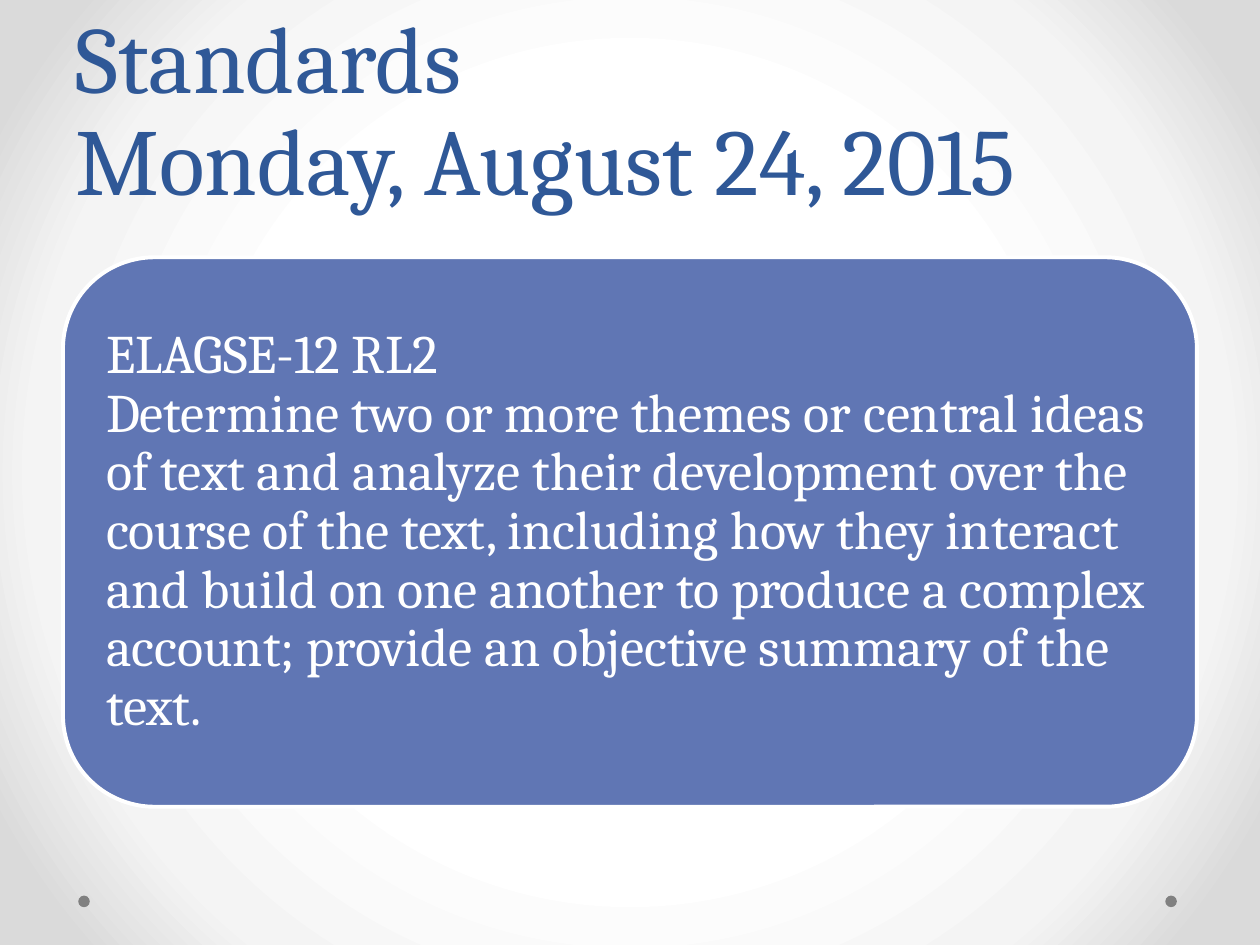
from dataclasses import dataclass

from lxml.etree import SubElement
from pptx import Presentation
from pptx.dml.color import RGBColor
from pptx.enum.shapes import MSO_SHAPE
from pptx.enum.text import MSO_ANCHOR, PP_ALIGN
from pptx.oxml.ns import qn
from pptx.util import Pt


@dataclass(frozen=True)
class Theme:
    font: str = "Cambria"
    heading: RGBColor = RGBColor(0x2F, 0x58, 0x97)
    panel: RGBColor = RGBColor(0x60, 0x76, 0xB4)
    light: RGBColor = RGBColor(0xFF, 0xFF, 0xFF)
    dot: RGBColor = RGBColor(0x80, 0x80, 0x80)
    glow: tuple = ((50, "FFFFFF"), (76, "F4F4F4"), (92, "DADADA"))
    heading_size: int = 54
    body_size: int = 31


THEME = Theme()


def paint_background(slide):
    slide.background.fill.gradient()
    gradient = slide.element.find(".//" + qn("a:gradFill"))
    for child in list(gradient):
        gradient.remove(child)
    stops = SubElement(gradient, qn("a:gsLst"))
    for percent, color in THEME.glow:
        stop = SubElement(stops, qn("a:gs"), pos=str(percent * 1000))
        SubElement(stop, qn("a:srgbClr"), val=color)
    circle = SubElement(gradient, qn("a:path"), path="circle")
    SubElement(circle, qn("a:fillToRect"), l="50000", t="50000", r="50000", b="50000")


def write_lines(frame, lines, size, color, spacing, anchor):
    frame.word_wrap = True
    frame.vertical_anchor = anchor
    paragraph = frame.paragraphs[0]
    paragraph.alignment = PP_ALIGN.LEFT
    paragraph.line_spacing = spacing
    paragraph.font.name = THEME.font
    paragraph.font.size = Pt(size)
    paragraph.font.color.rgb = color
    for index, line in enumerate(lines):
        if index:
            paragraph.add_line_break()
        paragraph.add_run().text = line


def add_filled(slide, preset, box, color):
    shape = slide.shapes.add_shape(preset, *map(Pt, box))
    shape.shadow.inherit = False
    shape.fill.solid()
    shape.fill.fore_color.rgb = color
    shape.line.fill.background()
    return shape


def add_footer_dots(slide, box):
    left, top, width, height = box
    for dot_left in (left, left + width - height):
        add_filled(slide, MSO_SHAPE.OVAL, (dot_left, top, height, height), THEME.dot)


def add_heading(slide, box, lines):
    heading = slide.shapes.add_textbox(*map(Pt, box))
    write_lines(heading.text_frame, lines, THEME.heading_size, THEME.heading,
                Pt(58), MSO_ANCHOR.BOTTOM)


def add_standard(slide, box, lines):
    panel = add_filled(slide, MSO_SHAPE.ROUNDED_RECTANGLE, box, THEME.panel)
    panel.line.color.rgb = THEME.light
    panel.line.width = Pt(2.25)
    frame = panel.text_frame
    frame.margin_left = frame.margin_right = Pt(9.3)
    frame.margin_top = frame.margin_bottom = Pt(9.3)
    write_lines(frame, lines, THEME.body_size, THEME.light, 0.9, MSO_ANCHOR.MIDDLE)


def main():
    deck = Presentation()
    deck.slide_width, deck.slide_height = Pt(720), Pt(540)
    slide = deck.slides.add_slide(deck.slide_layouts[6])
    paint_background(slide)
    add_footer_dots(slide, (44.7, 511.8, 627.8, 6.6))
    add_heading(slide, (36, 0, 648, 126), ("Standards", "Monday, August 24, 2015"))
    add_standard(slide, (36, 147, 648, 314), (
        "ELAGSE-12 RL2",
        "Determine two or more themes or central ideas of text and analyze their "
        "development over the course of the text, including how they interact and "
        "build on one another to produce a complex account; provide an objective "
        "summary of the text.",
    ))
    deck.save("out.pptx")


if __name__ == "__main__":
    main()
